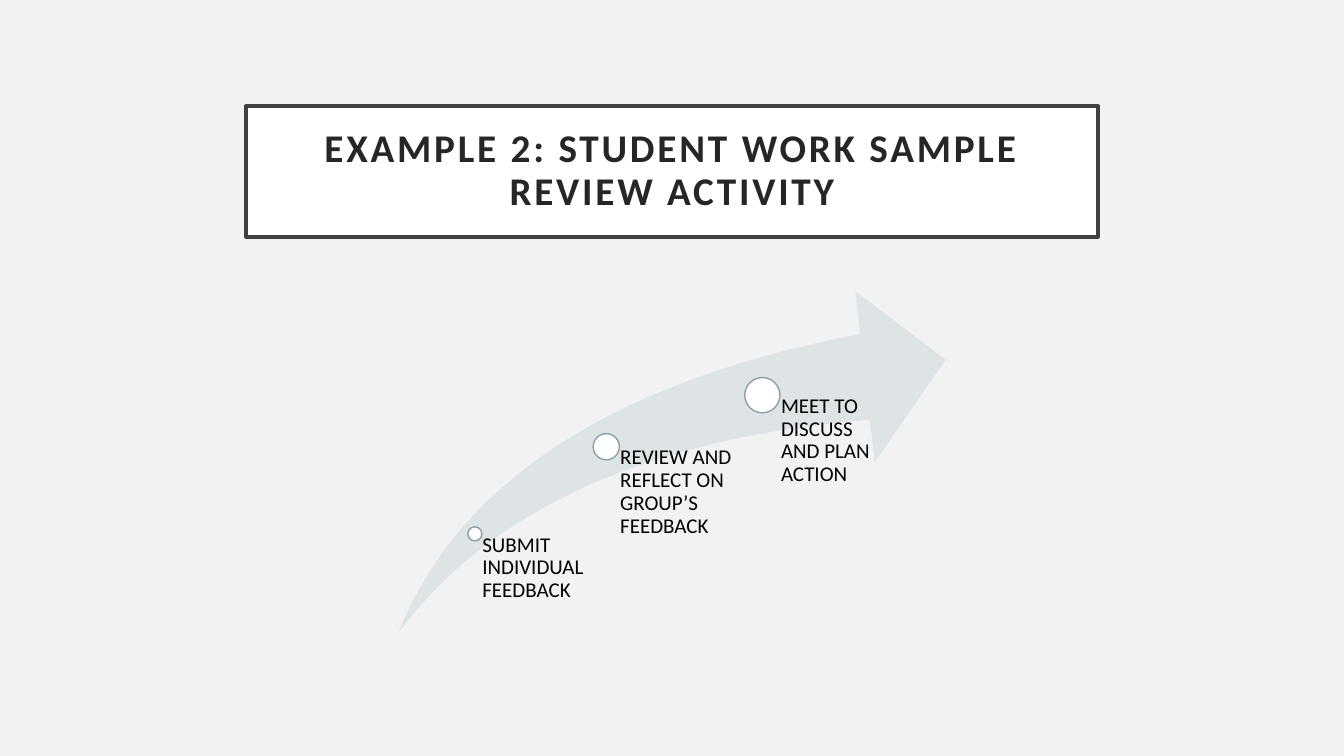
"""Build a title slide with a rising arrow that carries three activity steps."""
import pptx
import pptx.dml.color
import pptx.enum.shapes
import pptx.enum.text
import pptx.util

RGB = pptx.dml.color.RGBColor
SHAPE = pptx.enum.shapes.MSO_SHAPE
ANCHOR = pptx.enum.text.MSO_ANCHOR
ALIGN = pptx.enum.text.PP_ALIGN
Inches, Pt = pptx.util.Inches, pptx.util.Pt

TITLE = "EXAMPLE 2: STUDENT WORK SAMPLE REVIEW ACTIVITY"
# Each step: text, dot centre as shares of the arrow, dot diameter in inches, label width
STEPS = [
    ("SUBMIT INDIVIDUAL FEEDBACK", 0.14, 0.71, 0.14, 1.26),
    ("REVIEW AND REFLECT ON GROUP’S FEEDBACK", 0.38, 0.455, 0.26, 1.3),
    ("MEET TO DISCUSS AND PLAN ACTION", 0.665, 0.304, 0.35, 1.3),
]
FONT = "Calibri"
TITLE_BOX = (2.44, 1.05, 8.45, 1.3)
ARROW_BOX = (3.95, 2.89, 5.43, 3.39)
INSET_SHARE = 0.53

BACKGROUND = RGB(0xF2, 0xF2, 0xF2)
WHITE = RGB(0xFF, 0xFF, 0xFF)
BLACK = RGB(0, 0, 0)
FRAME = RGB(0x40, 0x40, 0x40)
TITLE_INK = RGB(0x26, 0x26, 0x26)
ARROW_FILL = RGB(0xDE, 0xE3, 0xE5)
DOT_LINE = RGB(0x8D, 0x9F, 0xA4)


def paint(sp, fill, line=None, width=0):
    """Give a shape a flat fill and an optional outline."""
    sp.fill.solid()
    sp.fill.fore_color.rgb = fill
    if line is None:
        sp.line.fill.background()
    else:
        sp.line.color.rgb = line
        sp.line.width = Pt(width)


def write(sp, text, size, color, insets, anchor, align, bold=False):
    """Fill a shape with one formatted paragraph and return its run."""
    tf = sp.text_frame
    tf.text = text
    tf.word_wrap = True
    tf.auto_size = pptx.enum.text.MSO_AUTO_SIZE.NONE
    tf.vertical_anchor = anchor
    tf.margin_left, tf.margin_top, tf.margin_right, tf.margin_bottom = map(Inches, insets)
    p = tf.paragraphs[0]
    p.alignment = align
    p.line_spacing = 0.9
    r = p.runs[0]
    r.font.name = FONT
    r.font.size = Pt(size)
    r.font.bold = bold
    r.font.color.rgb = color
    return r


def add_title(slide):
    """Format the title placeholder as a framed box."""
    sp = slide.shapes.title
    sp.left, sp.top, sp.width, sp.height = map(Inches, TITLE_BOX)
    paint(sp, WHITE, FRAME, 2.5)
    r = write(sp, TITLE, 28, TITLE_INK, (0.2,) * 4, ANCHOR.MIDDLE, ALIGN.CENTER, True)
    r.font._element.set("spc", "200")


def add_steps(slide):
    """Draw the arrow, then a dot and a label for each step."""
    shapes = slide.shapes.add_group_shape().shapes
    left, top, width, height = ARROW_BOX
    arrow = shapes.add_shape(SHAPE.SWOOSH_ARROW, *map(Inches, ARROW_BOX))
    arrow.adjustments[0] = arrow.adjustments[1] = 0.25
    arrow.shadow.inherit = False
    paint(arrow, ARROW_FILL)
    for text, across, down, size, label_width in STEPS:
        x, y = left + across * width, top + down * height
        dot_box = (x - size / 2, y - size / 2, size, size)
        dot = shapes.add_shape(SHAPE.OVAL, *map(Inches, dot_box))
        dot.shadow.inherit = False
        paint(dot, WHITE, DOT_LINE, 1)
        label_box = (x, y, label_width, top + height - y)
        label = shapes.add_textbox(*map(Inches, label_box))
        insets = (INSET_SHARE * size, 0, 0, 0)
        write(label, text, 15, BLACK, insets, ANCHOR.TOP, ALIGN.LEFT)


def main():
    """Assemble and save the slide."""
    prs = pptx.Presentation()
    prs.slide_width, prs.slide_height = Inches(13.33), Inches(7.5)
    slide = prs.slides.add_slide(prs.slide_layouts[5])
    slide.background.fill.solid()
    slide.background.fill.fore_color.rgb = BACKGROUND
    add_title(slide)
    add_steps(slide)
    prs.save("out.pptx")


if __name__ == "__main__":
    main()
